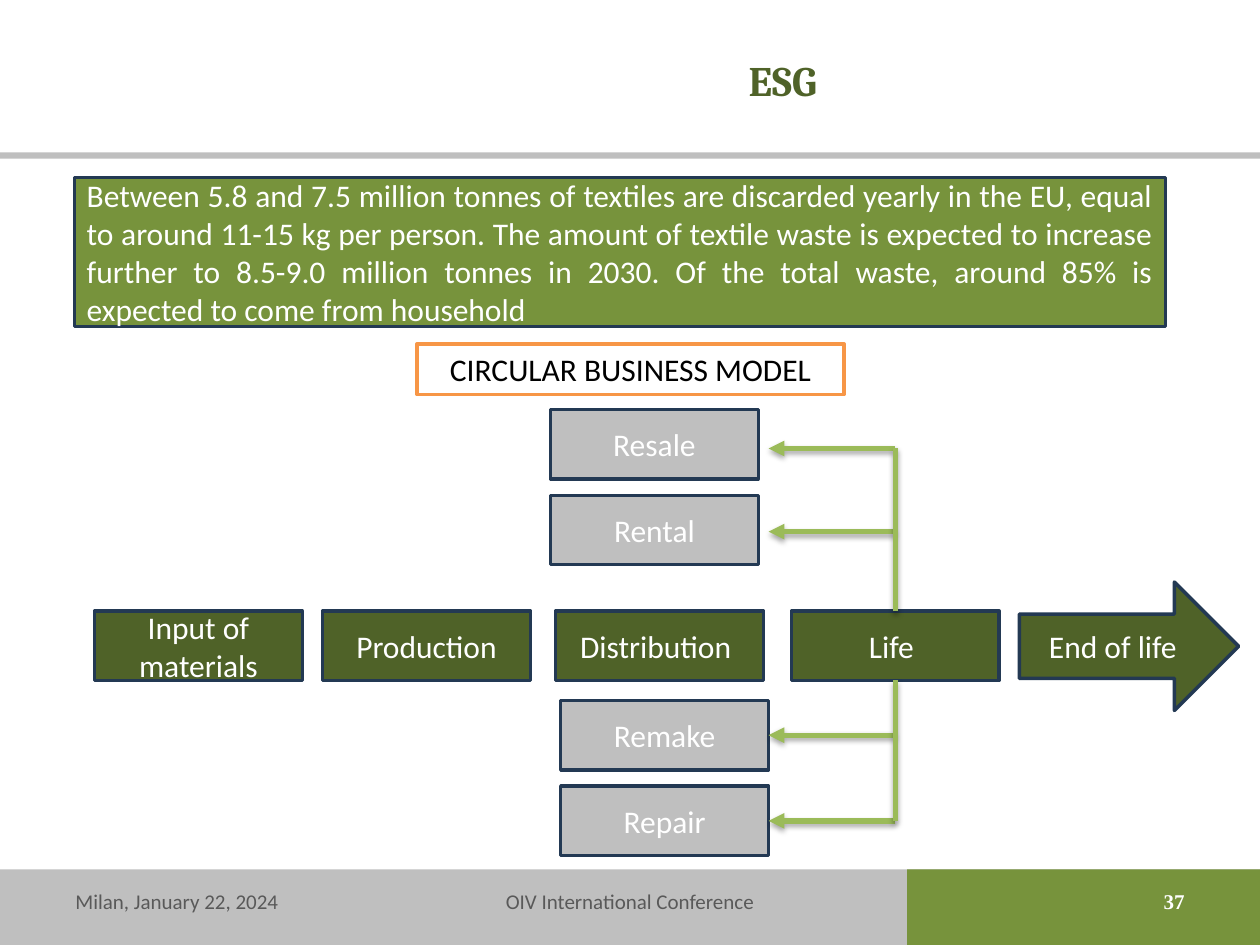
from lxml.etree import SubElement
from pptx import Presentation
from pptx.dml.color import RGBColor
from pptx.enum.shapes import MSO_CONNECTOR, MSO_SHAPE
from pptx.enum.text import MSO_ANCHOR, MSO_AUTO_SIZE, PP_ALIGN
from pptx.oxml.ns import qn
from pptx.util import Pt

GREEN, DARK_GREEN, LIGHT_GREEN = "77933C", "4F6228", "9BBB59"
GREY, NAVY, ORANGE = "BFBFBF", "233953", "F79646"
WHITE, BLACK, FOOTER_GREY = "FFFFFF", "000000", "595959"

BANDS = [
    ((0, 496.8, 720, 43.2), GREY),
    ((0, 87.1, 720, 3.6), GREY),
    ((518.4, 496.8, 201.6, 43.2), GREEN),
]
FOOTERS = [
    ("Milan, January 22, 2024", 36, 168, dict(align=PP_ALIGN.LEFT)),
    ("OIV International Conference", 246, 228, {}),
    ("37", 516, 168, dict(align=PP_ALIGN.RIGHT, font="Times New Roman",
                          color=WHITE, bold=True)),
]
FACTS = (
    "Between 5.8 and 7.5 million tonnes of textiles are discarded yearly in the EU, "
    "equal to around 11-15 kg per person. The amount of textile waste is expected to "
    "increase further to 8.5-9.0 million tonnes in 2030. Of the total waste, around "
    "85% is expected to come from household"
)
STAGES = [
    ("Input of materials", 54, 7.2),
    ("Production", 184.3, 7.2),
    ("Distribution", 317.5, 11.5),
    ("Life", 452.2, 11.5),
]
REUSE_LOOPS = [("Resale", 234, 256.3), ("Rental", 283, 303.8)]
REPAIR_LOOPS = [("Remake", 400.3), ("Repair", 449.3)]
BOX_WIDTH, BOX_HEIGHT = 118.8, 39.6
STAGE_TOP = 349.2
REUSE_LEFT, REPAIR_LEFT = 314.6, 320.4
LOOP_END = REPAIR_LEFT + BOX_WIDTH
SPINE = STAGES[-1][1] + BOX_WIDTH / 2

presentation = Presentation()
presentation.slide_width, presentation.slide_height = Pt(720), Pt(540)
slide = presentation.slides.add_slide(presentation.slide_layouts[5])


def rgb(color):
    return RGBColor.from_string(color)


def write(shape, text, size=18, font="Calibri", color=WHITE, bold=False,
          align=PP_ALIGN.CENTER, right_inset=7.2):
    frame = shape.text_frame
    frame.word_wrap = True
    frame.auto_size = MSO_AUTO_SIZE.NONE
    frame.vertical_anchor = MSO_ANCHOR.MIDDLE
    frame.margin_right = Pt(right_inset)
    paragraph = frame.paragraphs[0]
    paragraph.alignment = align
    run = paragraph.add_run()
    run.text = text
    run.font.size, run.font.name, run.font.bold = Pt(size), font, bold
    run.font.color.rgb = rgb(color)


def add_box(bounds, fill, text="", outline=None, kind=MSO_SHAPE.RECTANGLE, **text_format):
    box = slide.shapes.add_shape(kind, *map(Pt, bounds))
    box.shadow.inherit = False
    box.fill.solid()
    box.fill.fore_color.rgb = rgb(fill)
    if outline:
        box.line.color.rgb = rgb(outline)
        box.line.width = Pt(2)
    else:
        box.line.fill.background()
    if text:
        write(box, text, **text_format)
    return box


def add_line(start, end, arrow=False):
    line = slide.shapes.add_connector(MSO_CONNECTOR.STRAIGHT, *map(Pt, (*start, *end)))
    line.line.color.rgb = rgb(LIGHT_GREEN)
    line.line.width = Pt(3)
    properties = line._element.spPr
    if arrow:
        SubElement(properties.find(qn("a:ln")), qn("a:tailEnd"), type="triangle")
    effects = SubElement(properties, qn("a:effectLst"))
    shadow = SubElement(effects, qn("a:outerShdw"), blurRad=str(Pt(3.1)),
                        dist=str(Pt(1.8)), dir="5400000", rotWithShape="0")
    shade = SubElement(shadow, qn("a:srgbClr"), val=BLACK)
    SubElement(shade, qn("a:alpha"), val="35000")
    return line


for bounds, fill in BANDS:
    add_box(bounds, fill)

title = slide.shapes.title
title.left, title.top, title.width, title.height = map(Pt, (184.3, 0, 535.7, 90.7))
write(title, "ESG", size=24, font="Cambria", color=DARK_GREEN, bold=True, right_inset=17)

for text, left, width, text_format in FOOTERS:
    footer = slide.shapes.add_textbox(Pt(left), Pt(500.4), Pt(width), Pt(28.8))
    write(footer, text, **{"size": 12, "color": FOOTER_GREY, **text_format})

add_box((42.5, 101.5, 623.5, 85), GREEN, FACTS, NAVY, align=PP_ALIGN.JUSTIFY)

for text, left, right_inset in STAGES:
    life = add_box((left, STAGE_TOP, BOX_WIDTH, BOX_HEIGHT), DARK_GREEN, text, NAVY,
                   right_inset=right_inset)
add_box((582.5, 332.6, 125.3, 73.4), DARK_GREEN, "End of life", NAVY,
        kind=MSO_SHAPE.RIGHT_ARROW)

for text, top, arrow_y in REUSE_LOOPS:
    add_box((REUSE_LEFT, top, BOX_WIDTH, BOX_HEIGHT), GREY, text, NAVY)
    add_line((SPINE, arrow_y), (LOOP_END, arrow_y), arrow=True)
reuse_spine = add_line((SPINE, STAGE_TOP), (SPINE, REUSE_LOOPS[0][2]))
reuse_spine.begin_connect(life, 0)

for text, top in REPAIR_LOOPS:
    loop = add_box((REPAIR_LEFT, top, BOX_WIDTH, BOX_HEIGHT), GREY, text, NAVY)
    arrow_y = top + BOX_HEIGHT / 2
    branch = add_line((SPINE, arrow_y), (LOOP_END, arrow_y), arrow=True)
    branch.end_connect(loop, 3)
repair_spine = add_line((SPINE, arrow_y), (SPINE, STAGE_TOP + BOX_HEIGHT))
repair_spine.end_connect(life, 2)

add_box((238.3, 196.6, 244.1, 28.8), WHITE, "CIRCULAR BUSINESS MODEL", ORANGE, color=BLACK)

presentation.save("out.pptx")
